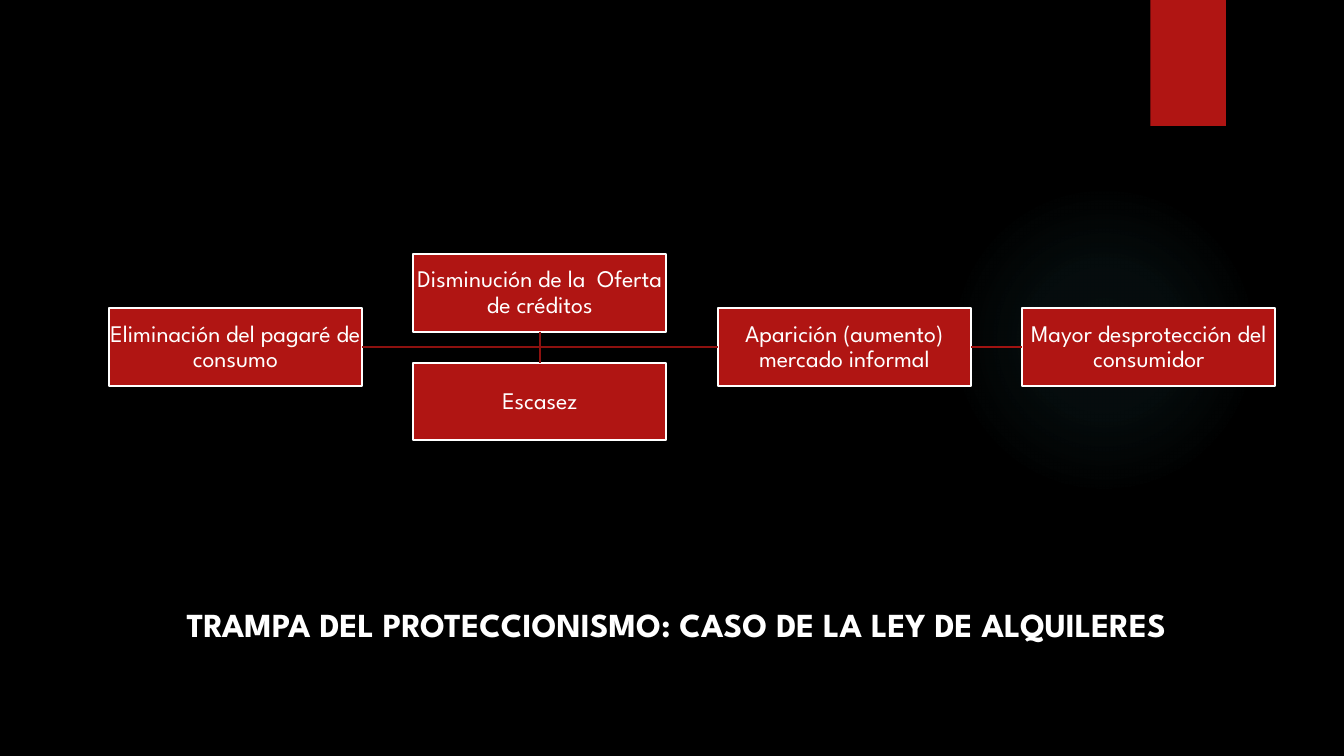
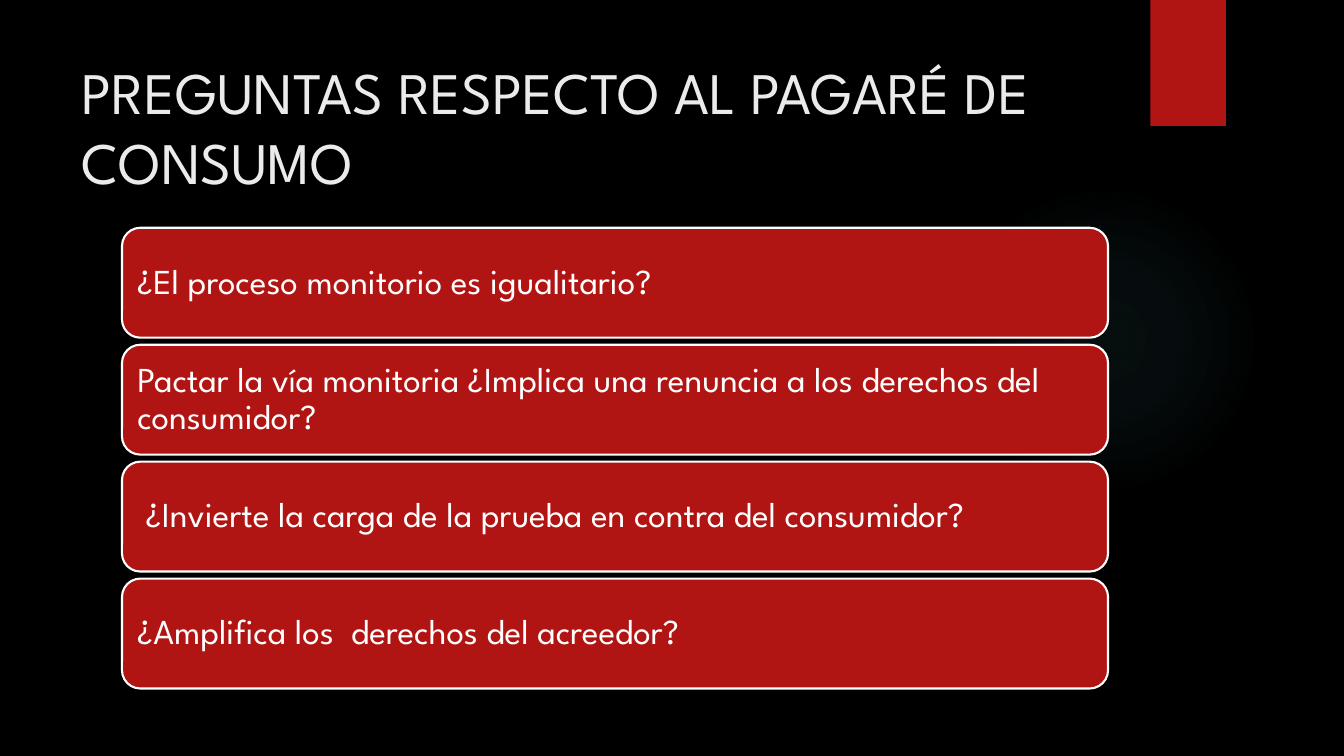
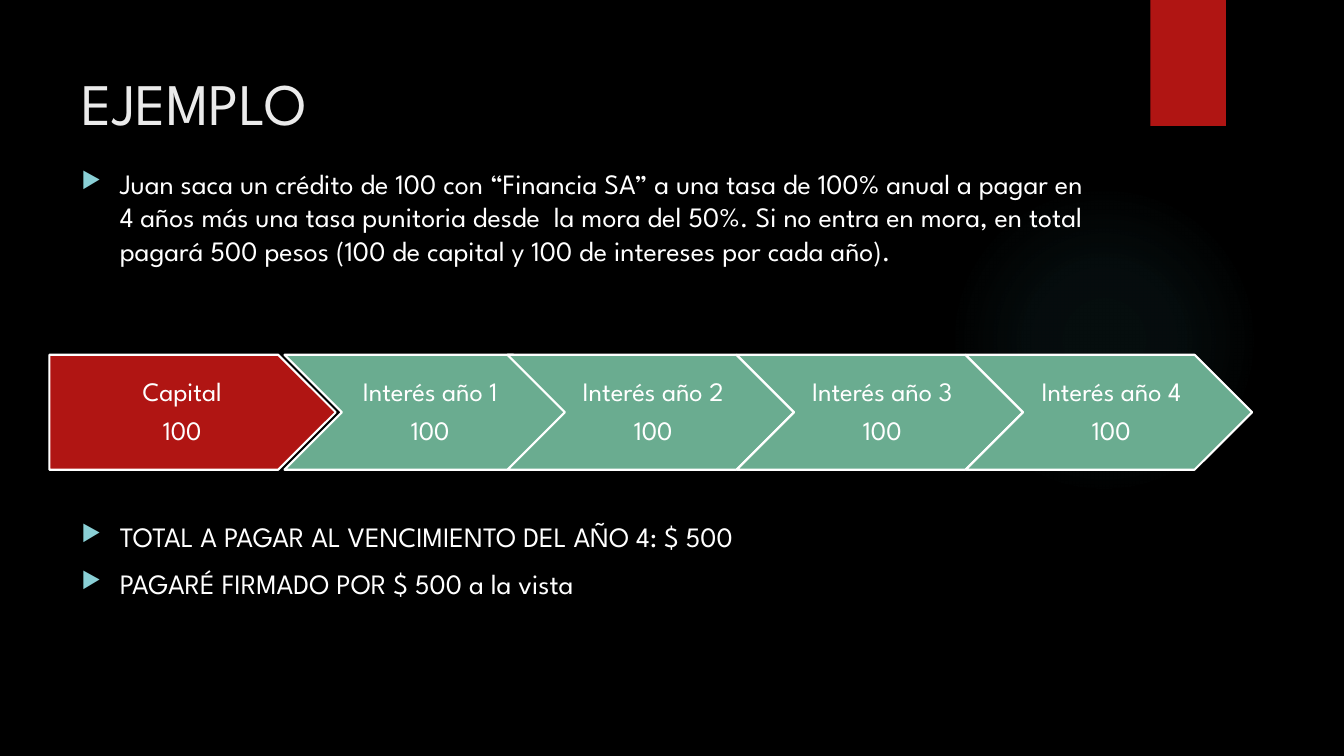
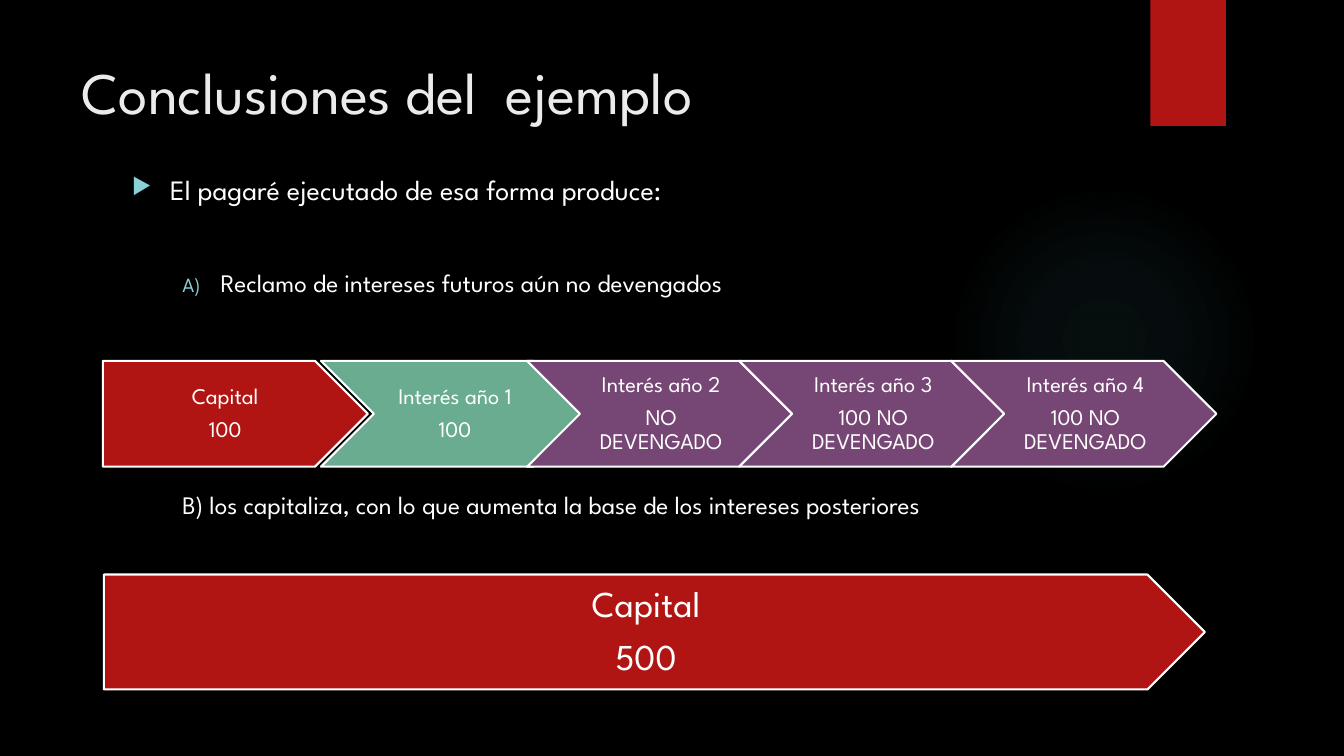
import dataclasses

import pptx
import pptx.dml.color
import pptx.enum.shapes
import pptx.enum.text
import pptx.oxml
import pptx.oxml.ns
import pptx.util
from lxml import etree

Inches = pptx.util.Inches
Pt = pptx.util.Pt
Color = pptx.dml.color.RGBColor.from_string
Shape = pptx.enum.shapes.MSO_SHAPE
Align = pptx.enum.text.PP_ALIGN
Anchor = pptx.enum.text.MSO_ANCHOR
qn = pptx.oxml.ns.qn


@dataclasses.dataclass(frozen=True)
class Theme:
    font: str = "League Spartan"
    background: str = "000000"
    text: str = "FFFFFF"
    title: str = "EBEBEB"
    red: str = "B01513"
    green: str = "6AAC90"
    purple: str = "764674"
    trunk: str = "8D110F"
    branch: str = "A01311"
    bullet: str = "8AD0D6"
    glow: str = "50B9C1"
    title_size: int = 42
    caption_size: int = 24
    question_size: int = 25
    total_size: int = 26
    body_size: int = 20
    detail_size: int = 18
    chain_size: int = 17
    outline: float = 1.5


theme = Theme()
presentation = pptx.Presentation()
presentation.slide_width = Inches(13.33)
presentation.slide_height = Inches(7.5)
master = presentation.slide_master
master.background.fill.solid()
master.background.fill.fore_color.rgb = Color(theme.background)


def add_slide(title, left, top, width, height, size=theme.title_size, color=theme.title, bold=False):
    slide = presentation.slides.add_slide(presentation.slide_layouts[5])
    shape = slide.shapes.title
    shape.left, shape.top, shape.width, shape.height = map(Inches, (left, top, width, height))
    frame = shape.text_frame
    frame.text = title
    frame.word_wrap = True
    frame.auto_size = pptx.enum.text.MSO_AUTO_SIZE.NONE
    frame.vertical_anchor = Anchor.TOP
    paragraph = frame.paragraphs[0]
    paragraph.alignment = Align.LEFT
    font = paragraph.runs[0].font
    font.name, font.size, font.bold = theme.font, Pt(size), bold
    font.color.rgb = Color(color)
    return slide


def add_box(slide, kind, left, top, width, height, fill, text, size, margins, alignment=Align.CENTER):
    shape = slide.shapes.add_shape(kind, *map(Inches, (left, top, width, height)))
    shape.shadow.inherit = False
    shape.fill.solid()
    shape.fill.fore_color.rgb = Color(fill)
    shape.line.color.rgb = Color(theme.text)
    shape.line.width = Pt(theme.outline)
    frame = shape.text_frame
    frame.text = text
    frame.word_wrap = True
    frame.vertical_anchor = Anchor.MIDDLE
    frame.margin_left, frame.margin_top, frame.margin_right, frame.margin_bottom = map(Inches, margins)
    for paragraph in frame.paragraphs:
        paragraph.alignment = alignment
        paragraph.line_spacing = 0.9
        paragraph.space_after = Pt(round(size * 0.37))
        font = paragraph.runs[0].font
        font.name, font.size = theme.font, Pt(size)
        font.color.rgb = Color(theme.text)
    return shape


chain = add_slide("TRAMPA DEL PROTECCIONISMO: CASO DE LA LEY DE ALQUILERES",
                  1.75, 5.94, 10.05, 0.91, theme.caption_size, theme.text, True)
questions = add_slide("PREGUNTAS RESPECTO AL PAGARÉ DE CONSUMO", 0.71, 0.5, 10.29, 1.53)
example = add_slide("EJEMPLO", 0.71, 0.61, 10.29, 0.9)
conclusions = add_slide("Conclusiones del  ejemplo", 0.71, 0.5, 10.29, 0.9)

glow = chain.shapes.add_shape(Shape.OVAL, *map(Inches, (9.41, 1.83, 3.08, 3.08)))
glow.fill.background()
stops = "".join(
    f'<a:gs pos="{position}000"><a:srgbClr val="{theme.glow}"><a:alpha val="{alpha}000"/></a:srgbClr></a:gs>'
    for position, alpha in ((0, 7), (36, 6), (69, 0)))
gradient = pptx.oxml.parse_xml(
    f'<a:gradFill {pptx.oxml.ns.nsdecls("a")} rotWithShape="1"><a:gsLst>{stops}</a:gsLst><a:path path="circle">'
    '<a:fillToRect l="50000" t="50000" r="50000" b="50000"/></a:path></a:gradFill>')
properties = glow.element.spPr
properties.replace(properties.find(qn("a:noFill")), gradient)

ribbon = chain.shapes.add_shape(Shape.RECTANGLE, *map(Inches, (11.41, 0, 0.75, 1.25)))
ribbon.fill.solid()
ribbon.fill.fore_color.rgb = Color(theme.red)

for number, shape in enumerate((glow, ribbon)):
    shape.line.fill.background()
    shape.shadow.inherit = False
    shape.element.nvSpPr.cNvPr.id = 100 + number
    master.shapes.element.insert(2 + number, shape.element)

steps = []
for column, row, text in (
    (0, 0, "Eliminación del pagaré de consumo"),
    (1, -1, "Disminución de la  Oferta de créditos"),
    (1, 1, "Escasez"),
    (2, 0, "Aparición (aumento) mercado informal"),
    (3, 0, "Mayor desprotección del consumidor"),
):
    steps.append(add_box(chain, Shape.RECTANGLE, 1.08 + 3.02 * column, 3.06 + 0.54 * row, 2.51, 0.77,
                         theme.red, text, theme.chain_size, (0.01,) * 4))
removal, supply, scarcity, informal, consumer = steps

for start, start_side, end, end_side, color in (
    (removal, 3, informal, 1, theme.trunk),
    (supply, 2, scarcity, 0, theme.trunk),
    (informal, 3, consumer, 1, theme.branch),
):
    connector = chain.shapes.add_connector(pptx.enum.shapes.MSO_CONNECTOR.STRAIGHT, 0, 0, 0, 0)
    connector.begin_connect(start, start_side)
    connector.end_connect(end, end_side)
    connector.line.color.rgb = Color(color)
    connector.line.width = Pt(theme.outline)
    etree.SubElement(connector.element.spPr, qn("a:effectLst"))

for row, text in enumerate((
    "¿El proceso monitorio es igualitario?",
    "Pactar la vía monitoria ¿Implica una renuncia a los derechos del consumidor?",
    " ¿Invierte la carga de la prueba en contra del consumidor?",
    "¿Amplifica los  derechos del acreedor?",
)):
    add_box(questions, Shape.ROUNDED_RECTANGLE, 1.21, 2.26 + 1.16 * row, 9.78, 1.09,
            theme.red, text, theme.question_size, (0.1,) * 4, Align.LEFT)

triangle = ("a:buChar", "char", "▶")
letter = ("a:buAutoNum", "type", "alphaUcParenR")
for slide, left, top, width, height, paragraphs in (
    (example, 0.71, 1.6, 10.28, 5.23, (
        ("Juan saca un crédito de 100 con “Financia SA” a una tasa de 100% anual a pagar en 4 años más "
         "una tasa punitoria desde  la mora del 50%. Si no entra en mora, en total pagará 500 pesos "
         "(100 de capital y 100 de intereses por cada año).", theme.body_size, 0, 0.38, triangle),
        ("TOTAL A PAGAR AL VENCIMIENTO DEL AÑO 4: $ 500", theme.body_size, 180, 0.38, triangle),
        ("PAGARÉ FIRMADO POR $ 500 a la vista", theme.body_size, 10, 0.38, triangle),
    )),
    (conclusions, 1.21, 1.66, 9.78, 5.17, (
        ("El pagaré ejecutado de esa forma produce:", theme.body_size, 0, 0.38, triangle),
        ("Reclamo de intereses futuros aún no devengados", theme.detail_size, 44, 0.88, letter),
        ("B) los capitaliza, con lo que aumenta la base de los intereses posteriores",
         theme.detail_size, 137, 0.5, None),
    )),
):
    frame = slide.shapes.add_textbox(*map(Inches, (left, top, width, height))).text_frame
    frame.word_wrap = True
    frame.text = "\n".join(entry[0] for entry in paragraphs)
    for paragraph, (text, size, gap, indent, bullet) in zip(frame.paragraphs, paragraphs):
        properties = paragraph._p.get_or_add_pPr()
        properties.set("marL", str(Inches(indent)))
        if bullet:
            tag, attribute, value = bullet
            properties.set("indent", str(Inches(-0.38)))
            bullet_color = etree.SubElement(properties, qn("a:buClr"))
            etree.SubElement(bullet_color, qn("a:srgbClr"), val=theme.bullet)
            etree.SubElement(properties, qn("a:buSzPct"), val="80000")
            etree.SubElement(properties, qn(tag)).set(attribute, value)
        paragraph.space_before = Pt(gap)
        font = paragraph.runs[0].font
        font.name, font.size = theme.font, Pt(size)
        font.color.rgb = Color(theme.text)

for slide, left, top, width, height, size, plate_margin, arrows in (
    (example, 0.49, 3.52, 2.84, 1.14, 19, 0.11, (
        ("Capital\n100", theme.red),
        ("Interés año 1\n100", theme.green),
        ("Interés año 2\n100", theme.green),
        ("Interés año 3\n100", theme.green),
        ("Interés año 4\n100", theme.green),
    )),
    (conclusions, 1.02, 3.58, 2.63, 1.05, 16, 0.09, (
        ("Capital\n100", theme.red),
        ("Interés año 1\n100", theme.green),
        ("Interés año 2\nNO DEVENGADO", theme.purple),
        ("Interés año 3\n100 NO DEVENGADO", theme.purple),
        ("Interés año 4\n100 NO DEVENGADO", theme.purple),
    )),
    (conclusions, 1.03, 5.7, 10.92, 1.14, theme.total_size, 0.15, (
        ("Capital\n500", theme.red),
    )),
):
    for column, (text, fill) in enumerate(arrows):
        kind = Shape.CHEVRON if column else Shape.PENTAGON
        margin = plate_margin - 0.03 if column else plate_margin
        nudge = 0.06 if column == 1 else 0
        add_box(slide, kind, left + 0.8 * width * column + nudge, top, width, height,
                fill, text, size, (margin, 0.06, 0.03, 0.06))

presentation.save("out.pptx")
